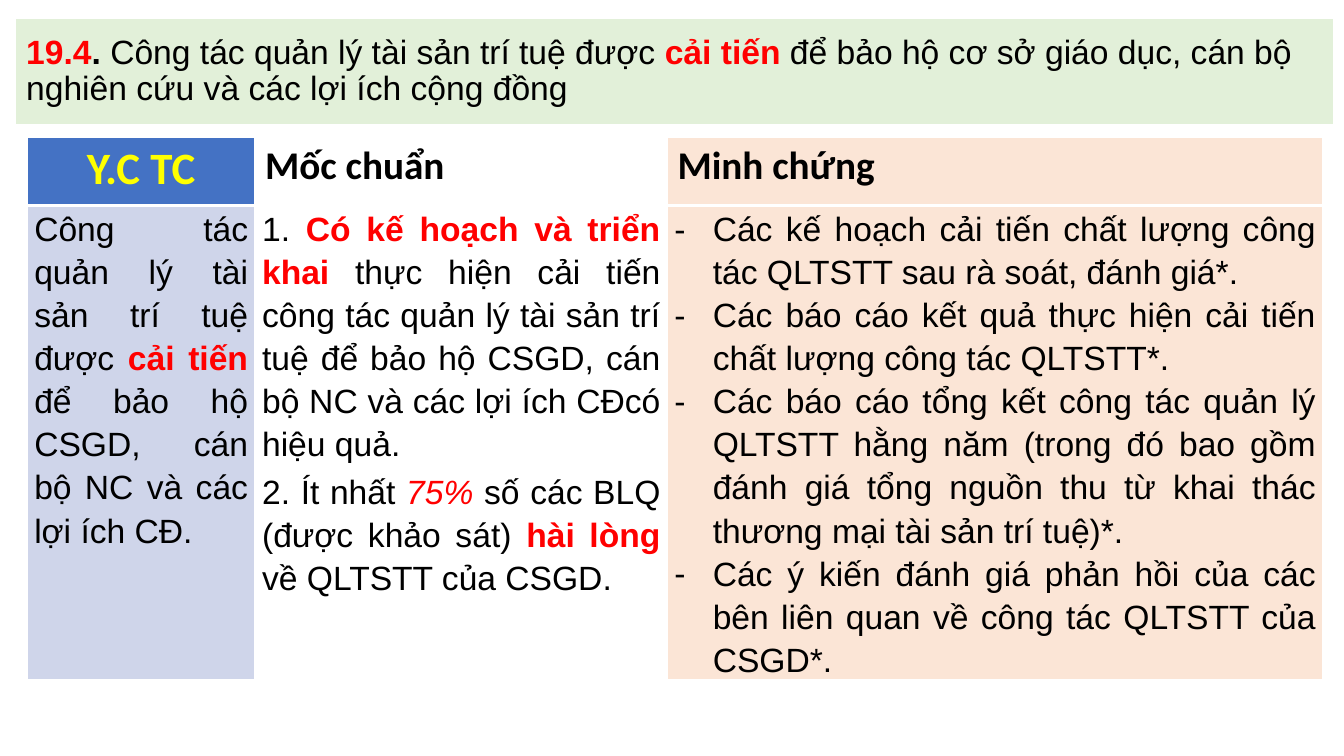
from lxml import etree
from pptx import Presentation
from pptx import util as u
from pptx.dml.color import RGBColor
from pptx.enum import text as t
from pptx.oxml.ns import qn

BLACK = RGBColor(0x00, 0x00, 0x00)
RED = RGBColor(0xFF, 0x00, 0x00)
YELLOW = RGBColor(0xFF, 0xFF, 0x00)
WHITE = RGBColor(0xFF, 0xFF, 0xFF)
GREEN = RGBColor(0xE2, 0xF0, 0xD9)
BLUE = RGBColor(0x44, 0x72, 0xC4)
PALE_BLUE = RGBColor(0xCF, 0xD5, 0xEA)
PEACH = RGBColor(0xFB, 0xE5, 0xD6)

# Content: a run is (text, style), a paragraph is a list of runs
PLAIN, STRONG = {}, {"color": RED, "bold": True}
TITLE = [
    ("19.4", STRONG), (". ", {"bold": True}),
    ("Công tác quản lý tài sản trí tuệ được ", PLAIN), ("cải tiến ", STRONG),
    ("để bảo hộ cơ sở giáo dục, cán bộ nghiên cứu và các lợi ích cộng đồng", PLAIN),
]
HEADERS = [
    ("Y.C TC", 32, YELLOW, BLUE, t.PP_ALIGN.CENTER),
    ("Mốc chuẩn", 28, BLACK, WHITE, t.PP_ALIGN.LEFT),
    ("Minh chứng", 28, BLACK, PEACH, t.PP_ALIGN.LEFT),
]
REQUIREMENT = [[
    ("Công tác quản lý tài sản trí tuệ được ", PLAIN), ("cải tiến ", STRONG),
    ("để bảo hộ CSGD, cán bộ NC và các lợi ích CĐ.", PLAIN),
]]
BENCHMARKS = [
    [("1. ", PLAIN), ("Có kế hoạch và triển khai ", STRONG),
     ("thực hiện cải tiến công tác quản lý tài sản trí tuệ để bảo hộ CSGD, "
      "cán bộ NC và các lợi ích CĐcó hiệu quả.", PLAIN)],
    [("2. Ít nhất ", PLAIN), ("75% ", {"color": RED, "italic": True}),
     ("số các BLQ (được khảo sát) ", PLAIN), ("hài lòng ", STRONG),
     ("về QLTSTT của CSGD.", PLAIN)],
]
EVIDENCE = [[(item, PLAIN)] for item in (
    "Các kế hoạch cải tiến chất lượng công tác QLTSTT sau rà soát, đánh giá*.",
    "Các báo cáo kết quả thực hiện cải tiến chất lượng công tác QLTSTT*.",
    "Các báo cáo tổng kết công tác quản lý QLTSTT hằng năm (trong đó bao gồm đánh giá "
    "tổng nguồn thu từ khai thác thương mại tài sản trí tuệ)*.",
    "Các ý kiến đánh giá phản hồi của các bên liên quan về công tác QLTSTT của CSGD*.",
)]
# Paragraphs, fill, bulleted
BODY = [(REQUIREMENT, PALE_BLUE, False), (BENCHMARKS, WHITE, False), (EVIDENCE, PEACH, True)]
COLUMN_WIDTHS = [2.26, 4.09, 6.5]
ROW_HEIGHTS = [0.68, 4.6]


def add_run(paragraph, wording, size=24, font="Arial", color=BLACK, bold=False, italic=False):
    run = paragraph.add_run()
    run.text = wording
    run.font.size, run.font.name = u.Pt(size), font
    run.font.bold, run.font.italic = bold, italic
    run.font.color.rgb = color


def style_cell(cell, fill, bottom_width):
    """Borders go in before the fill, as the schema orders them."""
    properties = cell._tc.get_or_add_tcPr()
    for side, width in (("L", 1), ("R", 1), ("T", 1), ("B", bottom_width)):
        line = etree.SubElement(properties, qn(f"a:ln{side}"), w=str(u.Pt(width)))
        solid = etree.SubElement(line, qn("a:solidFill"))
        etree.SubElement(solid, qn("a:srgbClr"), val=str(WHITE))
    cell.fill.solid()
    cell.fill.fore_color.rgb = fill


def add_dash(paragraph):
    properties = paragraph._p.get_or_add_pPr()
    properties.set("marL", str(u.Inches(0.38)))
    properties.set("indent", str(u.Inches(-0.38)))
    etree.SubElement(properties, qn("a:buFont"), typeface="Arial")
    etree.SubElement(properties, qn("a:buChar"), char="-")


prs = Presentation()
prs.slide_width, prs.slide_height = u.Inches(13.33), u.Inches(7.5)
slide = prs.slides.add_slide(prs.slide_layouts[5])

# Title band
title = slide.shapes.title
title.left, title.top = u.Inches(0.16), u.Inches(0.19)
title.width, title.height = u.Inches(13.06), u.Inches(1.04)
title.fill.solid()
title.fill.fore_color.rgb = GREEN
title.text_frame.word_wrap = True
title.text_frame.auto_size = t.MSO_AUTO_SIZE.NONE
title.text_frame.vertical_anchor = t.MSO_ANCHOR.MIDDLE
heading = title.text_frame.paragraphs[0]
heading.alignment, heading.line_spacing = t.PP_ALIGN.LEFT, 0.9
for wording, style in TITLE:
    add_run(heading, wording, **style)

# Table grid
table = slide.shapes.add_table(
    len(ROW_HEIGHTS), len(COLUMN_WIDTHS), u.Inches(0.27), u.Inches(1.36),
    u.Inches(sum(COLUMN_WIDTHS)), u.Inches(sum(ROW_HEIGHTS))).table
table.horz_banding = False
for column, width in zip(table.columns, COLUMN_WIDTHS):
    column.width = u.Inches(width)
for row, height in zip(table.rows, ROW_HEIGHTS):
    row.height = u.Inches(height)

# Header row
for col, (wording, size, color, fill, alignment) in enumerate(HEADERS):
    cell = table.cell(0, col)
    style_cell(cell, fill, bottom_width=3)
    label = cell.text_frame.paragraphs[0]
    label.alignment = alignment
    add_run(label, wording, size, "Calibri", color, bold=True)

# Body row
for col, (paragraphs, fill, bulleted) in enumerate(BODY):
    cell = table.cell(1, col)
    style_cell(cell, fill, bottom_width=1)
    cell.margin_left = cell.margin_right = u.Inches(0.07)
    cell.margin_top = cell.margin_bottom = 0
    for index, runs in enumerate(paragraphs):
        frame = cell.text_frame
        paragraph = frame.add_paragraph() if index else frame.paragraphs[0]
        paragraph.alignment, paragraph.line_spacing = t.PP_ALIGN.JUSTIFY, 1.15
        paragraph.space_before = u.Pt(0 if bulleted else 3)
        if bulleted:
            add_dash(paragraph)
        for wording, style in runs:
            add_run(paragraph, wording, **style)

prs.save("out.pptx")
